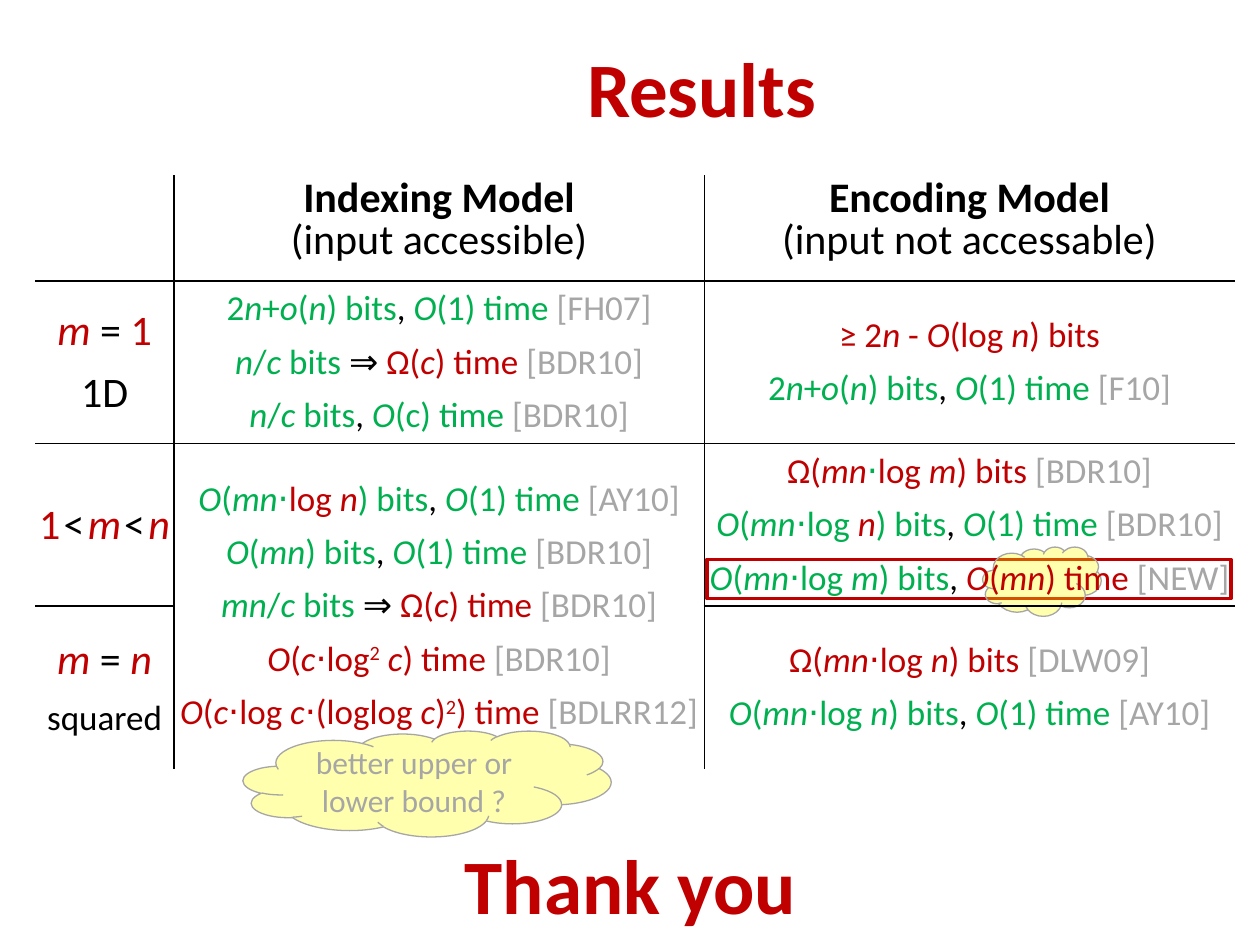
"""Build a results slide comparing indexing and encoding bounds in a table."""
from lxml.etree import SubElement as Sub
from pptx import Presentation
from pptx.dml.color import RGBColor
from pptx.enum.shapes import MSO_SHAPE as Form
from pptx.enum.text import MSO_ANCHOR as Anchor, PP_ALIGN as Align
from pptx.oxml import parse_xml
from pptx.oxml.ns import nsdecls, qn
from pptx.util import Inches, Pt

tint = RGBColor.from_string
HUES = {"k": "000000", "r": "C00000", "g": "00B050", "a": "A6A6A6"}


def write(para, text, size, bold=False):
    """Split text at | into hue-led parts, at _ for italics, at ^ for raised."""
    para.alignment = Align.CENTER
    for part in text.split("|"):
        for slant, piece in enumerate(part[1:].split("_")):
            for high, word in enumerate(piece.split("^")):
                if not word:
                    continue
                run = para.add_run()
                run.text = word
                font = run.font
                font.name = "Calibri"
                font.size = Pt(8 if word == " " else size)
                font.bold = bold
                font.italic = slant % 2 == 1
                font.color.rgb = tint(HUES[part[0]])
                if high % 2:
                    run._r.get_or_add_rPr().set("baseline", "30000")


deck = Presentation()
deck.slide_width, deck.slide_height = Inches(10), Inches(7.5)
unit = deck.slide_width // 100
slide = deck.slides.add_slide(deck.slide_layouts[5])
shapes = slide.shapes

title = shapes.title
title.left, title.top = int(19.7 * unit), int(0.6 * unit)
title.width, title.height = 72 * unit, int(12.5 * unit)
title.text_frame.vertical_anchor = Anchor.MIDDLE
write(title.text_frame.paragraphs[0], "rResults", 44, True)

MARKS = [
    (Form.RECTANGLE, (56.1, 44.4, 41.6, 3.1), "FFFFFF", 10, "C00000", 2, ""),
    (Form.CLOUD, (19.3, 58, 29.2, 8.4), "FFFF00", 32, "A6A6A6", 0.75,
     "abetter upper or lower bound ?"),
    (Form.CLOUD, (78, 43.4, 9.4, 5.5), "FFFF00", 32, "A6A6A6", 0.75, ""),
]
for form, box, hue, alpha, edge, wide, text in MARKS:
    mark = shapes.add_shape(form, *[int(n * unit) for n in box])
    mark.shadow.inherit = False
    mark.fill.solid()
    mark.fill.fore_color.rgb = tint(hue)
    shade = mark._element.spPr.find(qn("a:solidFill"))[0]
    Sub(shade, qn("a:alpha"), val=str(alpha * 1000))
    mark.line.color.rgb = tint(edge)
    mark.line.width = Pt(wide)
    if text:
        mark.text_frame.vertical_anchor = Anchor.MIDDLE
        write(mark.text_frame.paragraphs[0], text, 18)

thanks = shapes.add_textbox(*[int(n * unit) for n in (8.3, 64.9, 83.5, 10.4)])
thanks.text_frame.word_wrap = True
thanks.text_frame.vertical_anchor = Anchor.MIDDLE
write(thanks.text_frame.paragraphs[0], "rThank you", 44, True)

FAST = "|k, |g_O_(1) time |a"
LINEAR = "g2_n_+_o_(_n_) bits" + FAST
SLOW = "bits |k⇒ |rΩ(_c_) time |a[BDR10]"
ROWS = [
    [[], ["kIndexing Model", "k(input accessible)"],
     ["kEncoding Model", "k(input not accessable)"]],
    [["r_m_|k = |r1", "k1D"],
     [LINEAR + "[FH07]",
      "g_n_/_c _" + SLOW,
      "g_n_/_c_ bits|k, |g_O_(c) time |a[BDR10]"],
     ["r≥ 2_n _- _O_(log _n_) bits", LINEAR + "[F10]"]],
    [["r1|r |k<|r |r_m_|r |k<|k |r_n_"],
     ["g_O_(_mn⋅_|rlog _n_|g) bits" + FAST + "[AY10]",
      "g_O_(_mn_) bits" + FAST + "[BDR10]",
      "g_mn_/_c _" + SLOW,
      "r_O_(_c⋅_log^2^_ c_) time |a[BDR10]",
      "r_O_(_c_⋅log_ c⋅_(loglog_ c_)^2^) time |a[BDLRR12]"],
     ["rΩ(_mn_|g⋅|rlog _m_) bits |a[BDR10]",
      "g_O_(_mn_⋅log |r_n_|g) bits" + FAST + "[BDR10]",
      "g_O_(_mn_⋅log _m_) bits|k, |r_O_(_mn_) time |a[NEW]"]],
    [["r_m_|k = |r_n_", "ksquared"], [],
     ["rΩ(_mn_⋅log _n_) bits |a[DLW09]",
      "g_O_(_mn_⋅log _n_) bits" + FAST + "[AY10]"]],
]
WIDE, TALL = [11, 42.1, 42.1], [8.4, 12.9, 12.9, 12.9]
frame = shapes.add_table(4, 3, *[int(n * unit) for n in
                                 (2.8, 13.9, sum(WIDE), sum(TALL))])
table = frame.table
table.first_row = table.horz_banding = False
for col, wide in zip(table.columns, WIDE):
    col.width = int(wide * unit)
for row, tall in zip(table.rows, TALL):
    row.height = int(tall * unit)
table.cell(2, 1).merge(table.cell(3, 1))

for r, row in enumerate(ROWS):
    for c, lines in enumerate(row):
        cell = table.cell(r, c)
        cell.fill.background()
        if r:
            cell.vertical_anchor = Anchor.MIDDLE
            cell.margin_left = cell.margin_right = 0
            cell.margin_top = cell.margin_bottom = 0
        for i, text in enumerate(lines):
            frame = cell.text_frame
            para = frame.add_paragraph() if i else frame.paragraphs[0]
            size = 24 if r == 0 or c == 0 and text != "ksquared" else 20
            write(para, text, size, r == 0 and i == 0)
            if r:
                para.space_after = Pt(6)
            else:
                para.line_spacing = Pt(24)
        ruled = {"L": c > 0, "R": c < 2,
                 "T": r > 0 and (r, c) != (3, 1),
                 "B": r < 3 and (r, c) != (2, 1)}
        for spot, (side, shown) in enumerate(ruled.items()):
            ink = ('<a:solidFill><a:srgbClr val="000000"/></a:solidFill>'
                   if shown else "<a:noFill/>")
            edge = parse_xml(f'<a:ln{side} {nsdecls("a")} w="{Pt(1)}">'
                             f'{ink}</a:ln{side}>')
            cell._tc.get_or_add_tcPr().insert(spot, edge)

deck.save("out.pptx")
